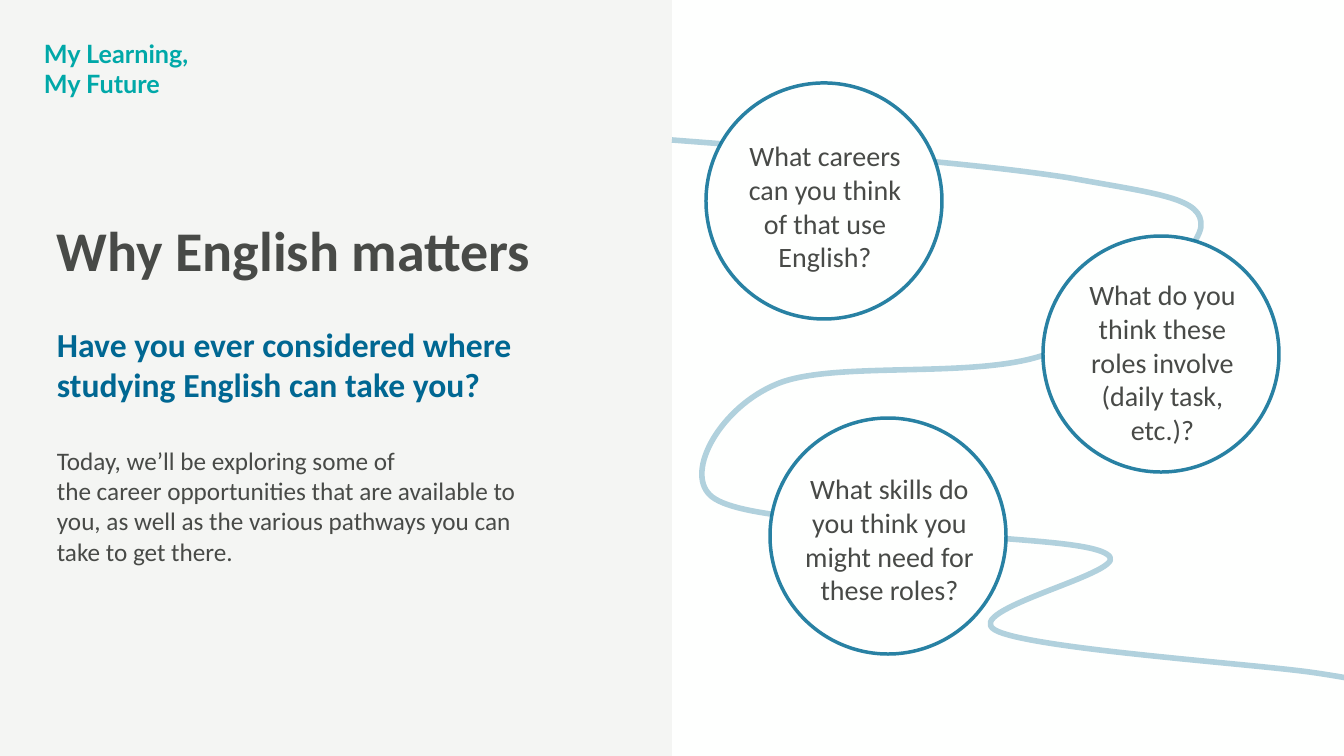
from lxml.etree import SubElement
from pptx import Presentation
from pptx.dml.color import RGBColor
from pptx.enum.shapes import MSO_SHAPE
from pptx.enum.text import MSO_AUTO_SIZE, PP_ALIGN
from pptx.oxml.ns import qn
from pptx.util import Pt

EMU_PER_PX = 12192000 / 1344
WHITE, SAND, TEAL, BLUE, DEEP_BLUE, GREY = (
    "FEFFFE", "E0DEDA", "00A8A8", "006992", "006792", "484A47")


def px(n):
    return round(n * EMU_PER_PX)


def paint(fill, color, alpha=100):
    """Make a fill solid, with alpha as percent opacity."""
    fill.solid()
    fill.fore_color.rgb = RGBColor.from_string(color)
    if alpha < 100:
        for clr in fill._xPr.iter(qn("a:srgbClr")):
            SubElement(clr, qn("a:alpha"), val=str(alpha * 1000))


class Deck:
    def __init__(self):
        self.prs = Presentation()
        self.prs.slide_width, self.prs.slide_height = px(1344), px(756)
        self.slide = self.prs.slides.add_slide(self.prs.slide_layouts[6])
        paint(self.slide.background.fill, WHITE)

    def outline(self, sp, width, alpha):
        sp.line.width = Pt(width)
        paint(sp.line.fill, BLUE, alpha)

    def shape(self, kind, box, color, alpha=100):
        sp = self.slide.shapes.add_shape(kind, *map(px, box))
        sp.shadow.inherit = False
        paint(sp.fill, color, alpha)
        sp.line.fill.background()
        return sp

    def circle(self, left, top, size=236):
        sp = self.shape(MSO_SHAPE.OVAL, (left, top, size, size), WHITE)
        self.outline(sp, 2.5, 84)

    def curve(self, start, points):
        """Draw a Bézier path; each three points are two controls and an end."""
        builder = self.slide.shapes.build_freeform(*start, scale=EMU_PER_PX)
        builder.add_line_segments(points, close=False)
        sp = builder.convert_to_shape()
        sp.shadow.inherit = False
        sp.fill.background()
        self.outline(sp, 4, 30)
        lines = list(sp._element.iter(qn("a:lnTo")))
        for first, *rest in zip(lines[::3], lines[1::3], lines[2::3]):
            bezier = SubElement(first.getparent(), qn("a:cubicBezTo"))
            for ln in (first, *rest):
                bezier.append(ln[0])
                ln.getparent().remove(ln)

    def text(self, box, *paras, font="Calibri", align=PP_ALIGN.LEFT):
        """Add paragraphs given as (text, size, colour, bold, space before)."""
        tf = self.slide.shapes.add_textbox(*map(px, box)).text_frame
        tf.word_wrap = True
        tf.auto_size = MSO_AUTO_SIZE.SHAPE_TO_FIT_TEXT
        for i, (words, size, color, bold, before) in enumerate(paras):
            p = tf.add_paragraph() if i else tf.paragraphs[0]
            p.text = words
            p.alignment = align
            if before:
                p.space_before = Pt(before)
            p.font.name, p.font.size, p.font.bold = font, Pt(size), bold
            p.font.color.rgb = RGBColor.from_string(color)


PATH_START = (672, 140)
PATH = [
    (828, 152), (983, 164), (1070, 178),
    (1158, 194), (1204, 198), (1201, 227),
    (1196, 256), (1118, 328), (1047, 354),
    (977, 380), (834, 360), (777, 384),
    (721, 407), (685, 471), (710, 495),
    (734, 519), (856, 520), (923, 530),
    (990, 541), (1098, 540), (1110, 557),
    (1122, 574), (961, 610), (995, 630),
    (1029, 649), (1257, 664), (1316, 673),
    (1376, 682), (1365, 683), (1353, 684),
]
# circle corner, text box, question
QUESTIONS = [
    ((706, 83), (737, 134, 176, 146),
     "What careers can you think of that use English?"),
    ((1043, 236), (1058, 273, 209, 179),
     "What do you think these roles involve (daily task, etc.)?"),
    ((770, 418), (792, 467, 195, 146),
     "What skills do you think you might need for these roles?"),
]


def main():
    deck = Deck()
    deck.shape(MSO_SHAPE.RECTANGLE, (0, 0, 672, 756), SAND, 30)
    deck.text((34, 33, 179, 72),
              ("My Learning,", 18, TEAL, True, 0),
              ("My Future", 18, TEAL, True, 0), font="Lato")
    deck.curve(PATH_START, PATH)
    deck.text((47, 211, 577, 78), ("Why English matters", 40, GREY, True, 0))
    deck.text((47, 319, 520, 254),
              ("Have you ever considered where studying English can take you?",
               24, DEEP_BLUE, True, 0),
              ("Today, we’ll be exploring some of\vthe career opportunities that "
               "are available to you, as well as the various pathways you can "
               "take to get there.", 18, GREY, False, 29))
    for corner, box, question in QUESTIONS:
        deck.circle(*corner)
        deck.text(box, (question, 20, GREY, False, 0), align=PP_ALIGN.CENTER)
    deck.prs.save("out.pptx")


if __name__ == "__main__":
    main()
